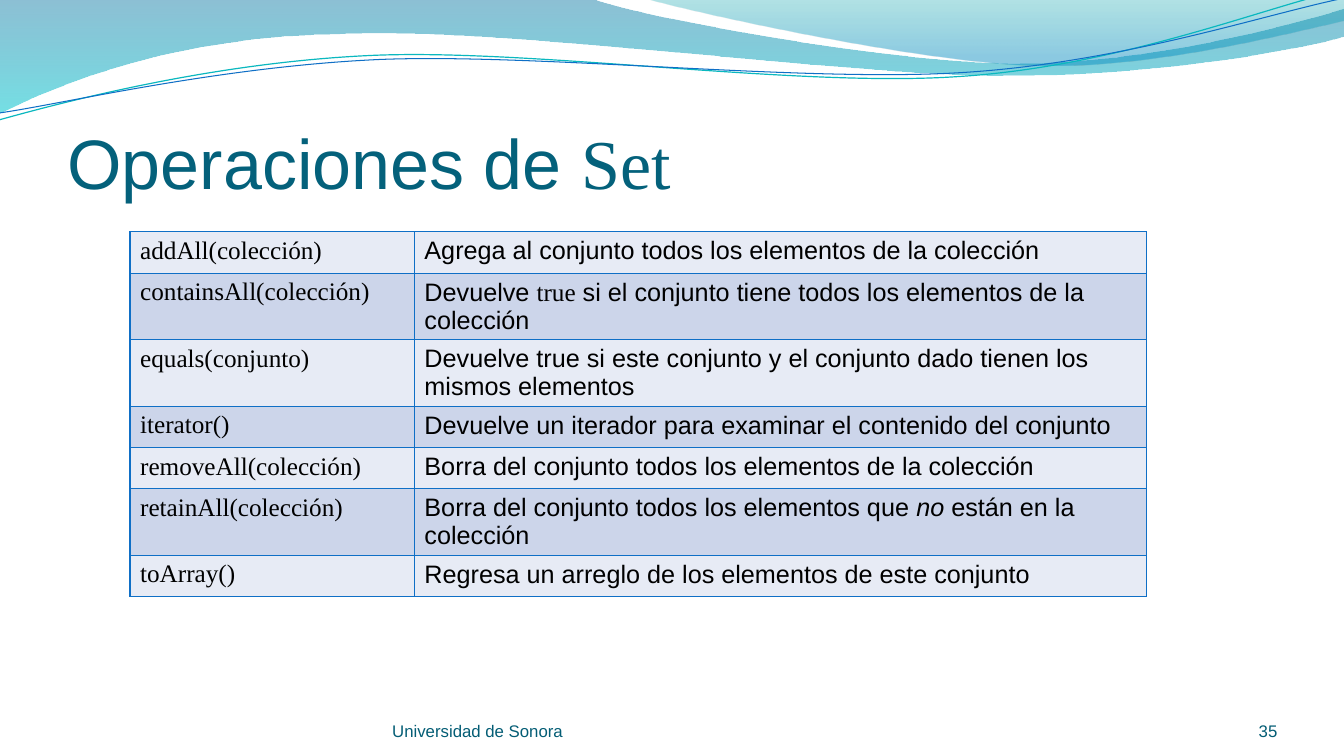
"""Build the slide about the operations of Set."""
from dataclasses import dataclass
from math import cos, radians, sin

from lxml.etree import SubElement
from pptx import Presentation
from pptx.dml.color import RGBColor
from pptx.enum.text import MSO_ANCHOR, MSO_AUTO_SIZE, PP_ALIGN
from pptx.oxml.ns import qn
from pptx.util import Inches, Pt

SANS, SERIF = "Arial", "Times New Roman"
BLACK, TITLE_TEAL, FOOTER_TEAL, BLUE = "000000", "04617B", "045D75", "0F6FC6"
BANDS = ("E7EBF5", "CCD5EA")
COLUMN_WIDTHS = (2.82, 7.26)
ROW_HEIGHT = 0.41
TILT = 2.7

Point = tuple[float, float]


@dataclass(frozen=True)
class Span:
    text: str
    face: str = SANS
    italic: bool = False


@dataclass(frozen=True)
class Operation:
    method: str
    effect: tuple[Span, ...]


@dataclass(frozen=True)
class GradientStop:
    position: float
    color: str
    opacity: int


@dataclass(frozen=True)
class Wave:
    """Each segment holds one end point, or two controls and an end point."""
    box: tuple[float, float, float, float]
    start: Point
    segments: tuple[tuple[Point, ...], ...]
    stops: tuple[GradientStop, ...] = ()
    color: str = BLUE
    weight: float = 0.75


@dataclass(frozen=True)
class FooterItem:
    text: str
    left: float
    width: float
    alignment: PP_ALIGN


WAVES = (
    Wave((-0.01, -0.01, 13.36, 1.14), (0, 0), (
        ((5.87, -0.01),),
        ((6.34, 0.17), (8.85, 0.63), (10.11, 0.63)),
        ((11.38, 0.63), (12.78, 0.26), (13.33, 0.09)),
        ((13.35, 0.36),),
        ((13.11, 0.44), (11.6, 0.76), (9.94, 0.75)),
        ((8.29, 0.75), (5.09, 0.28), (3.43, 0.34)),
        ((1.72, 0.36), (0.61, 0.83), (-0.01, 1.13)),
        ((0, 0),),
    ), (GradientStop(0, "0074A1", 45), GradientStop(1, "00C6CF", 55))),
    Wave((6.39, -0.01, 6.94, 0.7), (6.39, -0.01), (
        ((6.79, 0.11), (9.09, 0.62), (10.25, 0.65)),
        ((11.41, 0.69), (12.82, 0.32), (13.33, 0.21)),
        ((13.33, 0),),
        ((6.39, -0.01),),
    ), (GradientStop(0, "00A1A9", 30), GradientStop(0.8, "008BBF", 45))),
    Wave((-0.03, 0.22, 13.36, 0.71), (-0.01, 1.19), (
        ((0.64, 1.01), (2.11, 0.62), (3.69, 0.55)),
        ((5.27, 0.48), (7.9, 0.87), (9.5, 0.76)),
        ((11.1, 0.66), (12.52, 0.08), (13.31, -0.1)),
    ), color="0AB8BF", weight=0.85),
    Wave((-0.02, 0.3, 13.38, 0.58), (0, 1.12), (
        ((0.63, 1.03), (2.18, 0.66), (3.78, 0.59)),
        ((5.37, 0.53), (7.96, 0.82), (9.55, 0.72)),
        ((11.15, 0.62), (12.55, 0.14), (13.34, -0.02)),
    )),
)

OPERATIONS = (
    Operation("addAll(colección)", (Span("Agrega al conjunto todos los elementos de la colección"),)),
    Operation("containsAll(colección)", (
        Span("Devuelve "), Span("true", SERIF),
        Span(" si el conjunto tiene todos los elementos de la colección"))),
    Operation("equals(conjunto)", (
        Span("Devuelve true si este conjunto y el conjunto dado tienen los mismos elementos"),)),
    Operation("iterator()", (Span("Devuelve un iterador para examinar el contenido del conjunto"),)),
    Operation("removeAll(colección)", (Span("Borra del conjunto todos los elementos de la colección"),)),
    Operation("retainAll(colección)", (
        Span("Borra del conjunto todos los elementos que "), Span("no", italic=True),
        Span(" están en la colección"))),
    Operation("toArray()", (Span("Regresa un arreglo de los elementos de este conjunto"),)),
)

FOOTER = (
    FooterItem("Universidad de Sonora", 3.89, 4.89, PP_ALIGN.LEFT),
    FooterItem("35", 11.56, 1.11, PP_ALIGN.RIGHT),
)


def rgb(color: str) -> RGBColor:
    return RGBColor.from_string(color)


def place(part, left: float, top: float, width: float, height: float) -> None:
    part.left, part.top = Inches(left), Inches(top)
    part.width, part.height = Inches(width), Inches(height)


def curve_outline(ribbon, wave: Wave, tilt: float) -> None:
    left, top, width, height = wave.box
    place(ribbon, *wave.box)
    ribbon.rotation = -tilt % 360
    turn_x, turn_y = cos(radians(tilt)), sin(radians(tilt))
    outline = next(ribbon._element.iter(qn("a:path")))
    for command in list(outline):
        outline.remove(command)
    outline.set("w", str(Inches(width)))
    outline.set("h", str(Inches(height)))
    for points in ((wave.start,), *wave.segments):
        tag = "a:cubicBezTo" if len(points) == 3 else "a:lnTo" if len(outline) else "a:moveTo"
        command = SubElement(outline, qn(tag))
        for x, y in points:
            dx, dy = x - left - width / 2, y - top - height / 2
            SubElement(command, qn("a:pt"),
                       x=str(Inches(width / 2 + dx * turn_x - dy * turn_y)),
                       y=str(Inches(height / 2 + dx * turn_y + dy * turn_x)))
    if wave.stops:
        SubElement(outline, qn("a:close"))


def draw_wave(slide, wave: Wave) -> None:
    ends = [(Inches(x), Inches(y)) for x, y in (wave.start, *(s[-1] for s in wave.segments))]
    builder = slide.shapes.build_freeform(*ends[0])
    builder.add_line_segments(ends[1:], close=False)
    ribbon = builder.convert_to_shape()
    curve_outline(ribbon, wave, 0 if wave.stops else TILT)
    ribbon.shadow.inherit = False
    if not wave.stops:
        ribbon.fill.background()
        ribbon.line.color.rgb = rgb(wave.color)
        ribbon.line.width = Pt(wave.weight)
        return
    ribbon.line.fill.background()
    ribbon.fill.gradient()
    ribbon.fill.gradient_angle = 270
    for gradient_stop, stop in zip(ribbon.fill.gradient_stops, wave.stops):
        gradient_stop.position = stop.position
        gradient_stop.color.rgb = rgb(stop.color)
    for color, stop in zip(ribbon._element.spPr.iter(qn("a:srgbClr")), wave.stops):
        SubElement(color, qn("a:alpha"), val=str(stop.opacity * 1000))


def write(frame, spans: tuple[Span, ...], size: float, color: str,
          alignment: PP_ALIGN = PP_ALIGN.LEFT) -> None:
    paragraph = frame.paragraphs[0]
    paragraph.alignment = alignment
    paragraph.font.size = Pt(size)
    paragraph.font.color.rgb = rgb(color)
    paragraph.font.name = spans[0].face
    for span in spans:
        run = paragraph.add_run()
        run.text = span.text
        if span.face != spans[0].face:
            run.font.name = span.face
        if span.italic:
            run.font.italic = True


def set_frame(frame, top_margin: float = 0) -> None:
    frame.word_wrap = True
    frame.auto_size = MSO_AUTO_SIZE.NONE
    frame.vertical_anchor = MSO_ANCHOR.BOTTOM
    frame.margin_left = frame.margin_right = frame.margin_bottom = 0
    frame.margin_top = Inches(top_margin)


def format_cell(cell, spans: tuple[Span, ...], band: str) -> None:
    for side in ("lnL", "lnR", "lnT", "lnB"):
        border = SubElement(cell._tc.get_or_add_tcPr(), qn(f"a:{side}"), w=str(Pt(1)))
        SubElement(SubElement(border, qn("a:solidFill")), qn("a:srgbClr"), val=BLUE)
    cell.fill.solid()
    cell.fill.fore_color.rgb = rgb(band)
    write(cell.text_frame, spans, 18, BLACK)


def draw_operations(slide) -> None:
    holder = slide.shapes.add_table(len(OPERATIONS), len(COLUMN_WIDTHS), 0, 0, 0, 0)
    table = holder.table
    table.first_row = table.horz_banding = False
    for column, width in zip(table.columns, COLUMN_WIDTHS):
        column.width = Inches(width)
    for index, (row, operation) in enumerate(zip(table.rows, OPERATIONS)):
        row.height = Inches(ROW_HEIGHT)
        for cell, spans in zip(row.cells, ((Span(operation.method, SERIF),), operation.effect)):
            format_cell(cell, spans, BANDS[index % 2])
    place(holder, 1.29, 2.3, sum(COLUMN_WIDTHS), 3.72)


def main() -> None:
    deck = Presentation()
    deck.slide_width, deck.slide_height = Inches(13.33), Inches(7.5)
    slide = deck.slides.add_slide(deck.slide_layouts[5])
    for wave in WAVES:
        draw_wave(slide, wave)
    heading = slide.shapes.title
    place(heading, 0.67, 0.77, 12, 1.25)
    set_frame(heading.text_frame, 0.05)
    write(heading.text_frame, (Span("Operaciones de "), Span("Set", SERIF)), 50, TITLE_TEAL)
    draw_operations(slide)
    for item in FOOTER:
        note = slide.shapes.add_textbox(0, 0, 0, 0)
        place(note, item.left, 6.95, item.width, 0.4)
        set_frame(note.text_frame)
        write(note.text_frame, (Span(item.text),), 12, FOOTER_TEAL, item.alignment)
    deck.save("out.pptx")


if __name__ == "__main__":
    main()
